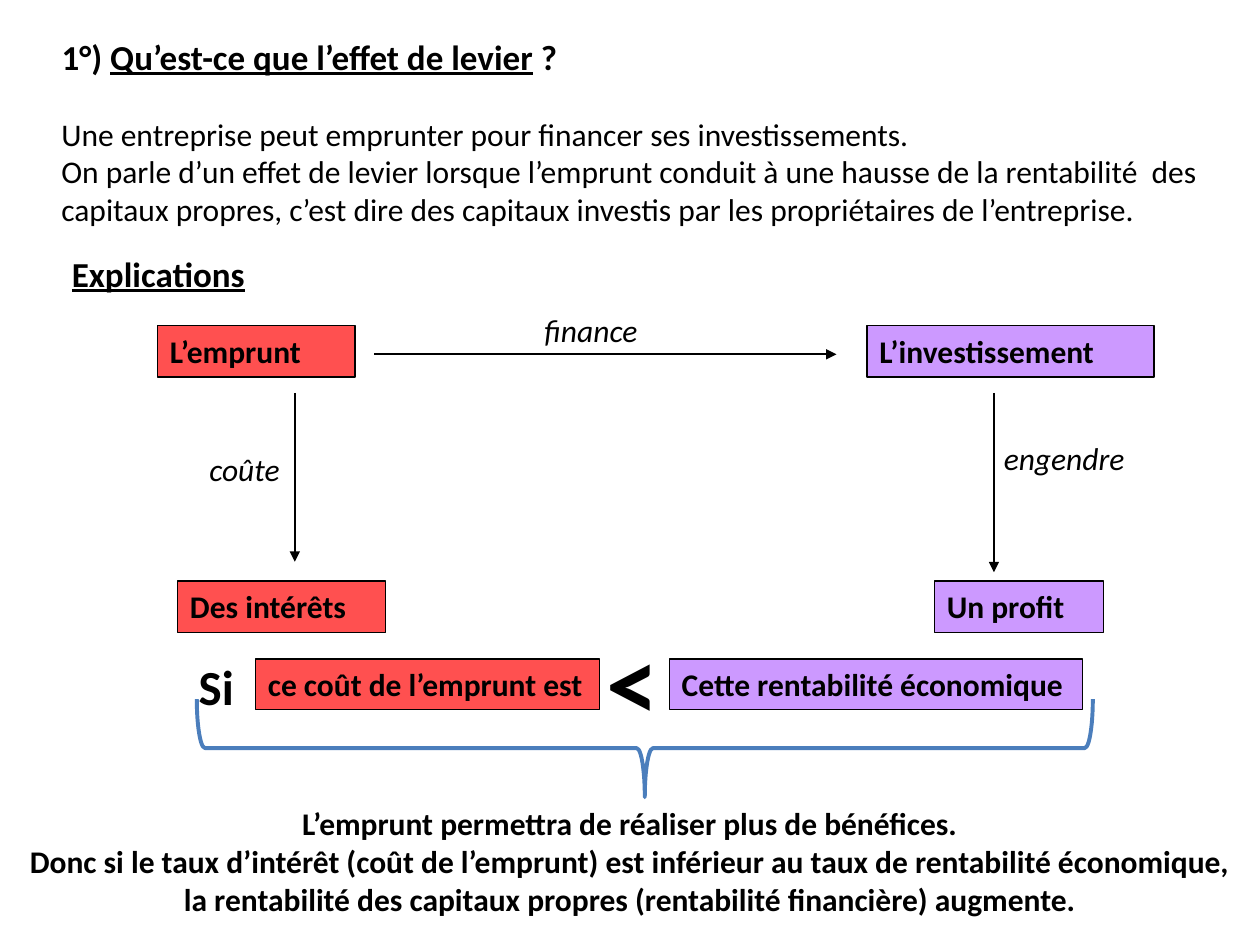
from lxml.etree import SubElement
from pptx import Presentation
from pptx.dml.color import RGBColor
from pptx.enum.shapes import MSO_CONNECTOR as CONN, MSO_SHAPE as SHAPE
from pptx.enum.text import MSO_ANCHOR as ANCHOR, PP_ALIGN as ALIGN
from pptx.oxml.ns import qn
from pptx.util import Pt

BLACK, RED, PURPLE, BLUE = "000000", "FF5050", "CC99FF", "4B7EBC"
BOX_H = 29.5


def rgb(value):
    """Return the colour for a hex string."""
    return RGBColor.from_string(value)


def write(sp, lines, size=18, bold=False, italic=False, align=ALIGN.LEFT):
    """Fill a shape with paragraphs, each a list of (text, underlined) runs or a string."""
    tf = sp.text_frame
    tf.word_wrap = True
    tf.vertical_anchor = ANCHOR.TOP
    for i, line in enumerate(lines):
        p = tf.add_paragraph() if i else tf.paragraphs[0]
        p.alignment = align
        for text, underline in [(line, False)] if isinstance(line, str) else line:
            r = p.add_run()
            r.text = text
            font = r.font
            font.name, font.size, font.color.rgb = "Calibri", Pt(size), rgb(BLACK)
            font.bold, font.italic, font.underline = bold, italic, underline


def add_text(slide, box, lines, **style):
    """Add a text box."""
    sp = slide.shapes.add_textbox(*map(Pt, box))
    write(sp, lines, **style)


def add_box(slide, box, text, fill):
    """Add a filled, outlined box with bold text."""
    sp = slide.shapes.add_shape(SHAPE.RECTANGLE, *map(Pt, box))
    sp.shadow.inherit = False
    sp.fill.solid()
    sp.fill.fore_color.rgb = rgb(fill)
    sp.line.color.rgb = rgb(BLACK)
    sp.line.width = Pt(0.75)
    write(sp, [text], bold=True)


def add_arrow(slide, x1, y1, x2, y2, width=0.75):
    """Add a straight arrow with a triangular head at its end."""
    cx = slide.shapes.add_connector(CONN.STRAIGHT, Pt(x1), Pt(y1), Pt(x2), Pt(y2))
    cx.line.color.rgb = rgb(BLACK)
    cx.line.width = Pt(width)
    SubElement(cx.line._get_or_add_ln(), qn("a:tailEnd"), type="triangle")
    SubElement(cx._element.spPr, qn("a:effectLst"))


def add_brace(slide, box):
    """Add a downward-pointing brace that spans the box."""
    x, y, w, h = box
    left, top = x + (w - h) / 2, y + (h - w) / 2
    sp = slide.shapes.add_shape(SHAPE.LEFT_BRACE, Pt(left), Pt(top), Pt(h), Pt(w))
    sp.rotation = 270
    sp.shadow.inherit = False
    sp.fill.background()
    sp.line.color.rgb = rgb(BLUE)
    sp.line.width = Pt(2.25)


def build_title(slide, box):
    """Place and format the title."""
    sp = slide.shapes.title
    sp.left, sp.top, sp.width, sp.height = map(Pt, box)
    runs = [("1°) ", False), ("Qu’est-ce que l’effet de levier", True), (" ?", False)]
    write(sp, [runs], size=20, bold=True)


def build_definition(slide, box):
    """Place the definition and the heading of the explanations."""
    x, y, w, h = box
    add_text(slide, (x, y, w, 72.5), [
        "Une entreprise peut emprunter pour financer ses investissements.",
        "On parle d’un effet de levier lorsque l’emprunt conduit à une hausse de la "
        "rentabilité  des capitaux propres, c’est dire des capitaux investis par les "
        "propriétaires de l’entreprise.",
    ])
    add_text(slide, (x + 6, y + h - 31.5, 196.5, 31.5), [[("Explications", True)]],
             size=20, bold=True)


def build_diagram(slide, box):
    """Place the loan and investment chains, linked by labelled arrows."""
    x, y, w, h = box
    bottom = y + h - BOX_H
    add_box(slide, (x, y, 113, BOX_H), "L’emprunt", RED)
    add_box(slide, (x + 11.5, bottom, 119, BOX_H), "Des intérêts", RED)
    add_box(slide, (x + w - 164, y, 164, BOX_H), "L’investissement", PURPLE)
    add_box(slide, (x + w - 125.5, bottom, 96.5, BOX_H), "Un profit", PURPLE)

    add_arrow(slide, x + 124, y + 16.5, x + 388, y + 16.5, 1)
    add_arrow(slide, x + 78.5, y + 38.5, x + 78.5, bottom - 11)
    add_arrow(slide, x + 478, y + 38.5, x + 478, bottom - 5)

    labels = [("finance", 214, -12, 113), ("coûte", 22.5, 67.5, 67.5),
              ("engendre", 476.5, 61.5, 153.5)]
    for text, dx, dy, width in labels:
        add_text(slide, (x + dx, y + dy, width, 29), [text], italic=True)


def build_condition(slide, box):
    """Place the comparison of cost and return above its brace."""
    x, y, w, h = box
    add_text(slide, (x - 6, y - 5, 50.5, 41), ["Si"], size=28, bold=True)
    add_box(slide, (x + 33.5, y, 196.5, 29), "ce coût de l’emprunt est", RED)
    add_text(slide, (x + 227, y - 28, 93, 80), ["<"], size=60, bold=True)
    add_box(slide, (x + 270, y, 236, 29), "Cette rentabilité économique", PURPLE)
    add_brace(slide, (x, y + h - 56, w, 56))


def build_conclusion(slide, box):
    """Place the centred conclusion."""
    add_text(slide, box, [
        "L’emprunt permettra de réaliser plus de bénéfices.",
        "Donc si le taux d’intérêt (coût de l’emprunt) est inférieur au taux de "
        "rentabilité économique,",
        "la rentabilité des capitaux propres (rentabilité financière) augmente.",
    ], bold=True, align=ALIGN.CENTER)


def main():
    """Build and save the slide."""
    prs = Presentation()
    prs.slide_width, prs.slide_height = Pt(720), Pt(540)
    slide = prs.slides.add_slide(prs.slide_layouts[5])
    build_title(slide, (28, 16.5, 444, 31.5))
    build_definition(slide, (28, 62, 669.5, 110))
    build_diagram(slide, (90, 186, 569.5, 175.5))
    build_condition(slide, (112.5, 376.5, 512, 79))
    build_conclusion(slide, (0, 456, 720, 72.5))
    prs.save("out.pptx")


if __name__ == "__main__":
    main()
